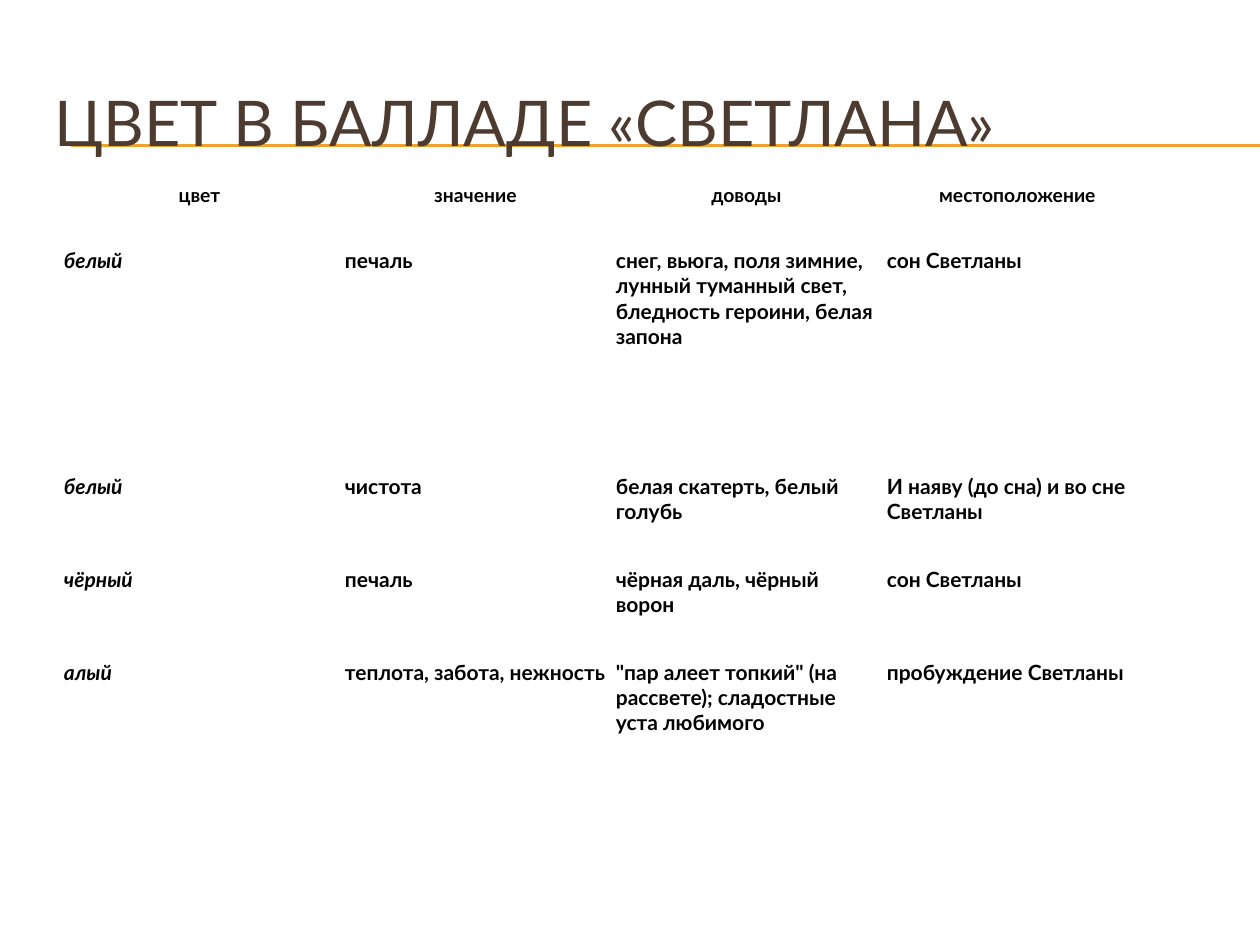
from lxml import etree
from pptx import Presentation
from pptx.dml.color import RGBColor
from pptx.enum.shapes import MSO_CONNECTOR
from pptx.enum.text import MSO_ANCHOR, PP_ALIGN
from pptx.oxml.ns import qn
from pptx.util import Emu, Pt

PX_PER_INCH = 126
FONT = "Lato"
COLORS = {"title": "4E3B30", "rule": "F0A22E", "body": "000000"}

HEADINGS = ["цвет", "значение", "доводы", "местоположение"]
MEANINGS = [
    ["белый", "печаль",
     "снег, вьюга, поля зимние, лунный туманный свет, бледность героини, белая запона",
     "сон Светланы"],
    ["белый", "чистота", "белая скатерть, белый голубь",
     "И наяву (до сна) и во сне Светланы"],
    ["чёрный", "печаль", "чёрная даль, чёрный ворон", "сон Светланы"],
    ["алый", "теплота, забота, нежность",
     '"пар алеет топкий" (на рассвете); сладостные уста любимого',
     "пробуждение Светланы"],
]
COLUMN_WIDTHS = [281, 271, 271, 271]
ROW_HEIGHTS = [65, 226, 93, 93, 173]
CELL_MARGIN = 5


def px(length):
    return Emu(round(length * 914400 / PX_PER_INCH))


def write_text(frame, text, *, size, color, bold=False, italic=False,
               align=PP_ALIGN.LEFT):
    frame.word_wrap = True
    paragraph = frame.paragraphs[0]
    paragraph.alignment = align
    run = paragraph.add_run()
    run.text = text
    font = run.font
    font.name, font.size = FONT, Pt(size)
    font.bold, font.italic = bold, italic
    font.color.rgb = RGBColor.from_string(COLORS[color])


def add_rule(slide, left, right, y):
    rule = slide.shapes.add_connector(
        MSO_CONNECTOR.STRAIGHT, px(left), px(y), px(right), px(y))
    rule.line.color.rgb = RGBColor.from_string(COLORS["rule"])
    rule.line.width = Pt(0.75)
    etree.SubElement(rule._element.spPr, qn("a:effectLst"))


def add_title(slide, text):
    title = slide.shapes.add_textbox(px(42), px(63), px(1197), px(116))
    title.text_frame.vertical_anchor = MSO_ANCHOR.MIDDLE
    write_text(title.text_frame, text, size=36, color="title")


def fill_cell(cell, text, **text_format):
    cell.fill.background()
    cell.margin_left = cell.margin_right = px(CELL_MARGIN)
    cell.margin_top = cell.margin_bottom = px(CELL_MARGIN)
    write_text(cell.text_frame, text, color="body", bold=True, **text_format)


def add_color_table(slide, left, top):
    table = slide.shapes.add_table(
        len(ROW_HEIGHTS), len(COLUMN_WIDTHS), px(left), px(top),
        px(sum(COLUMN_WIDTHS)), px(sum(ROW_HEIGHTS))).table
    table.first_row = table.horz_banding = False
    for column, width in zip(table.columns, COLUMN_WIDTHS):
        column.width = px(width)
    for row, height in zip(table.rows, ROW_HEIGHTS):
        row.height = px(height)

    # Column headings
    for col, heading in enumerate(HEADINGS):
        fill_cell(table.cell(0, col), heading, size=11, align=PP_ALIGN.CENTER)

    # Colours in italics, then their meaning, evidence and place
    for row, meaning in enumerate(MEANINGS, start=1):
        for col, text in enumerate(meaning):
            fill_cell(table.cell(row, col), text, size=12, italic=col == 0)


def main():
    prs = Presentation()
    prs.slide_width, prs.slide_height = px(1260), px(945)
    slide = prs.slides.add_slide(prs.slide_layouts[6])

    # Double rule behind the title
    for y in (145, 146):
        add_rule(slide, 71, 1260, y)
    add_title(slide, "ЦВЕТ В БАЛЛАДЕ «СВЕТЛАНА»")
    add_color_table(slide, 59, 178)

    prs.save("out.pptx")


if __name__ == "__main__":
    main()
